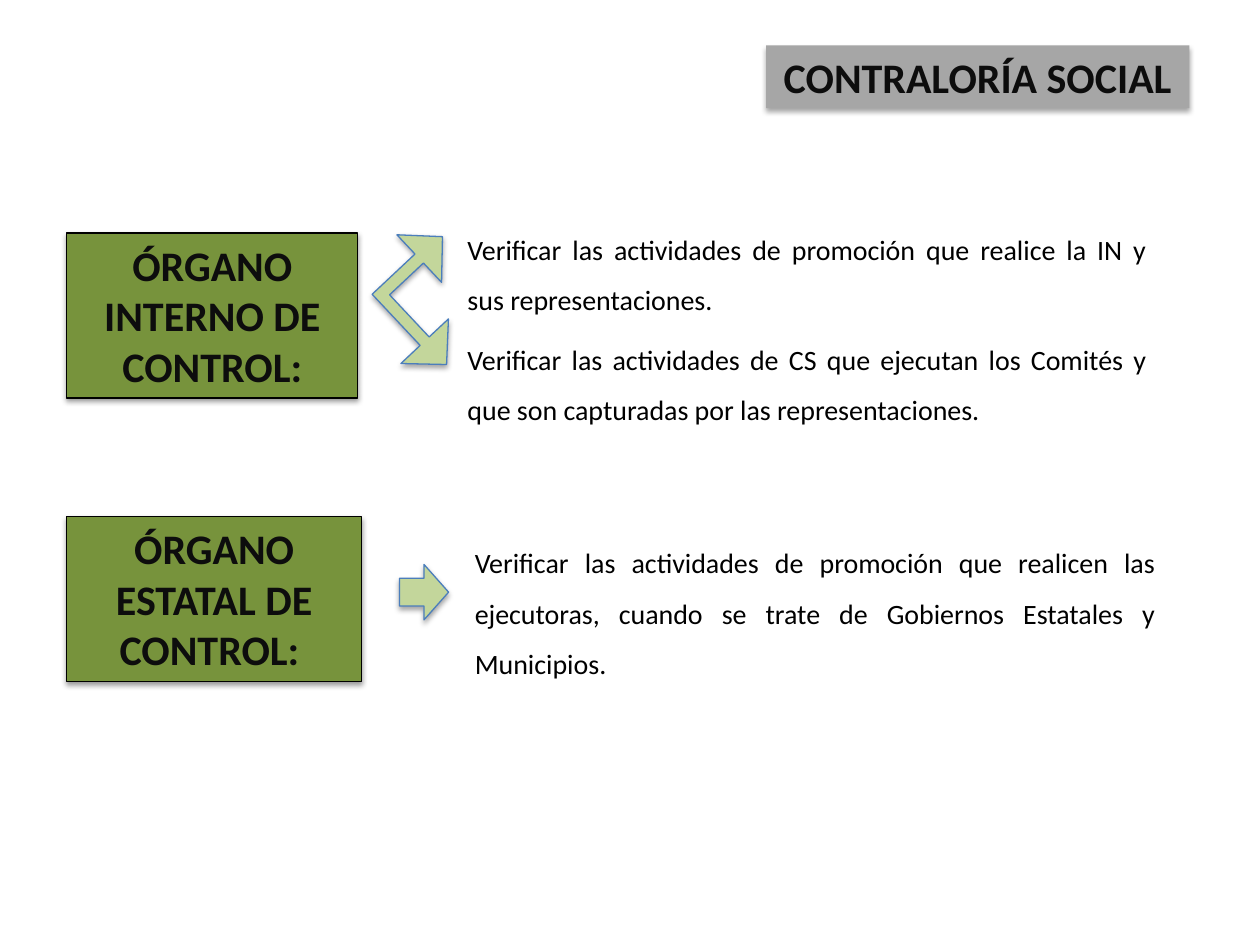
from dataclasses import dataclass
from typing import Optional

from lxml import etree
from pptx import Presentation
from pptx.dml.color import RGBColor
from pptx.enum import shapes, text
from pptx.oxml import ns
from pptx.util import Inches, Pt

GREEN = RGBColor(0x77, 0x93, 0x3C)
LIGHT_GREEN = RGBColor(0xC3, 0xD6, 0x9B)
GRAY = RGBColor(0xA6, 0xA6, 0xA6)
BLUE = RGBColor(0x4B, 0x7E, 0xBC)
BLACK = RGBColor(0, 0, 0)
DARK = RGBColor(0x0D, 0x0D, 0x0D)
FONT = "Calibri"


@dataclass(frozen=True)
class Area:
    left: float
    top: float
    width: float
    height: float

    def lengths(self) -> tuple:
        return tuple(map(Inches, (self.left, self.top, self.width, self.height)))


@dataclass(frozen=True)
class Label:
    area: Area
    wording: str
    fill: RGBColor
    line: Optional[RGBColor] = None
    opacity: int = 38
    distance: float = 1.6


@dataclass(frozen=True)
class Arrow:
    area: Area
    kind: shapes.MSO_SHAPE
    rotation: float = 0
    adjustments: tuple = ()


@dataclass(frozen=True)
class Duties:
    area: Area
    paragraphs: tuple
    margin_left: float = 0.1


LABELS = (
    Label(Area(6.08, 0.36, 3.36, 0.5), "CONTRALORÍA SOCIAL", GRAY, None, 35, 1.8),
    Label(Area(0.53, 1.85, 2.31, 1.31), "ÓRGANO INTERNO DE CONTROL:", GREEN, BLACK),
    Label(Area(0.53, 4.1, 2.34, 1.31), "ÓRGANO ESTATAL DE CONTROL: ", GREEN, BLACK),
)
DUTIES = (
    Duties(Area(3.42, 1.66, 5.78, 1.81), (
        "Verificar las actividades de promoción que realice la IN y sus representaciones.",
        "Verificar las actividades de CS que ejecutan los Comités y que son capturadas "
        "por las representaciones.",
    ), 0.29),
    Duties(Area(3.67, 4.15, 5.6, 1.29), (
        "Verificar las actividades de promoción que realicen las ejecutoras, cuando se "
        "trate de Gobiernos Estatales y Municipios.",
    )),
)
ARROWS = (
    Arrow(Area(2.88, 1.87, 0.93, 1.02), shapes.MSO_SHAPE.LEFT_UP_ARROW, 136.8,
          (0.105, 0.278, 0.273)),
    Arrow(Area(3.17, 4.48, 0.39, 0.44), shapes.MSO_SHAPE.RIGHT_ARROW),
)


def add_shadow(shape, opacity: int, distance: float) -> None:
    shape.shadow.inherit = False
    effects = shape._element.spPr.find(ns.qn("a:effectLst"))
    shadow = etree.SubElement(
        effects, ns.qn("a:outerShdw"), blurRad=str(Pt(3.1)), dist=str(Pt(distance)),
        dir="5400000", rotWithShape="0")
    color = etree.SubElement(shadow, ns.qn("a:srgbClr"), val=str(BLACK))
    etree.SubElement(color, ns.qn("a:alpha"), val=str(opacity * 1000))


def add_filled_shape(slide, kind, area: Area, fill: RGBColor, line: Optional[RGBColor],
                     opacity: int, distance: float):
    shape = slide.shapes.add_shape(kind, *area.lengths())
    shape.fill.solid()
    shape.fill.fore_color.rgb = fill
    if line is None:
        shape.line.fill.background()
    else:
        shape.line.color.rgb = line
        shape.line.width = Pt(0.75)
    add_shadow(shape, opacity, distance)
    return shape


def format_runs(paragraph, size: float, color: RGBColor, bold: bool) -> None:
    for run in paragraph.runs:
        run.font.name = FONT
        run.font.size = Pt(size)
        run.font.color.rgb = color
        run.font.bold = bold


def draw_label(slide, label: Label) -> None:
    shape = add_filled_shape(slide, shapes.MSO_SHAPE.RECTANGLE, label.area, label.fill,
                             label.line, label.opacity, label.distance)
    frame = shape.text_frame
    frame.text = label.wording
    frame.word_wrap = True
    frame.auto_size = text.MSO_AUTO_SIZE.SHAPE_TO_FIT_TEXT
    frame.vertical_anchor = text.MSO_ANCHOR.TOP
    paragraph = frame.paragraphs[0]
    paragraph.alignment = text.PP_ALIGN.CENTER
    format_runs(paragraph, 24, DARK, True)


def draw_arrow(slide, arrow: Arrow) -> None:
    shape = add_filled_shape(slide, arrow.kind, arrow.area, LIGHT_GREEN, BLUE, 35, 1.8)
    shape.rotation = arrow.rotation
    for index, value in enumerate(arrow.adjustments):
        shape.adjustments[index] = value


def draw_duties(slide, duties: Duties) -> None:
    frame = slide.shapes.add_textbox(*duties.area.lengths()).text_frame
    frame.word_wrap = True
    frame.auto_size = text.MSO_AUTO_SIZE.SHAPE_TO_FIT_TEXT
    frame.margin_left = Inches(duties.margin_left)
    frame.text = "\n".join(duties.paragraphs)
    for index, paragraph in enumerate(frame.paragraphs):
        paragraph.alignment = text.PP_ALIGN.JUSTIFY
        paragraph.line_spacing = 1.5
        paragraph.space_after = Pt(4)
        if index:
            paragraph.space_before = Pt(1.6)
        format_runs(paragraph, 16, BLACK, False)


def main() -> None:
    presentation = Presentation()
    presentation.slide_width = Inches(10)
    presentation.slide_height = Inches(7.5)
    slide = presentation.slides.add_slide(presentation.slide_layouts[6])
    for label in LABELS:
        draw_label(slide, label)
    for duties in DUTIES:
        draw_duties(slide, duties)
    for arrow in ARROWS:
        draw_arrow(slide, arrow)
    presentation.save("out.pptx")


if __name__ == "__main__":
    main()
